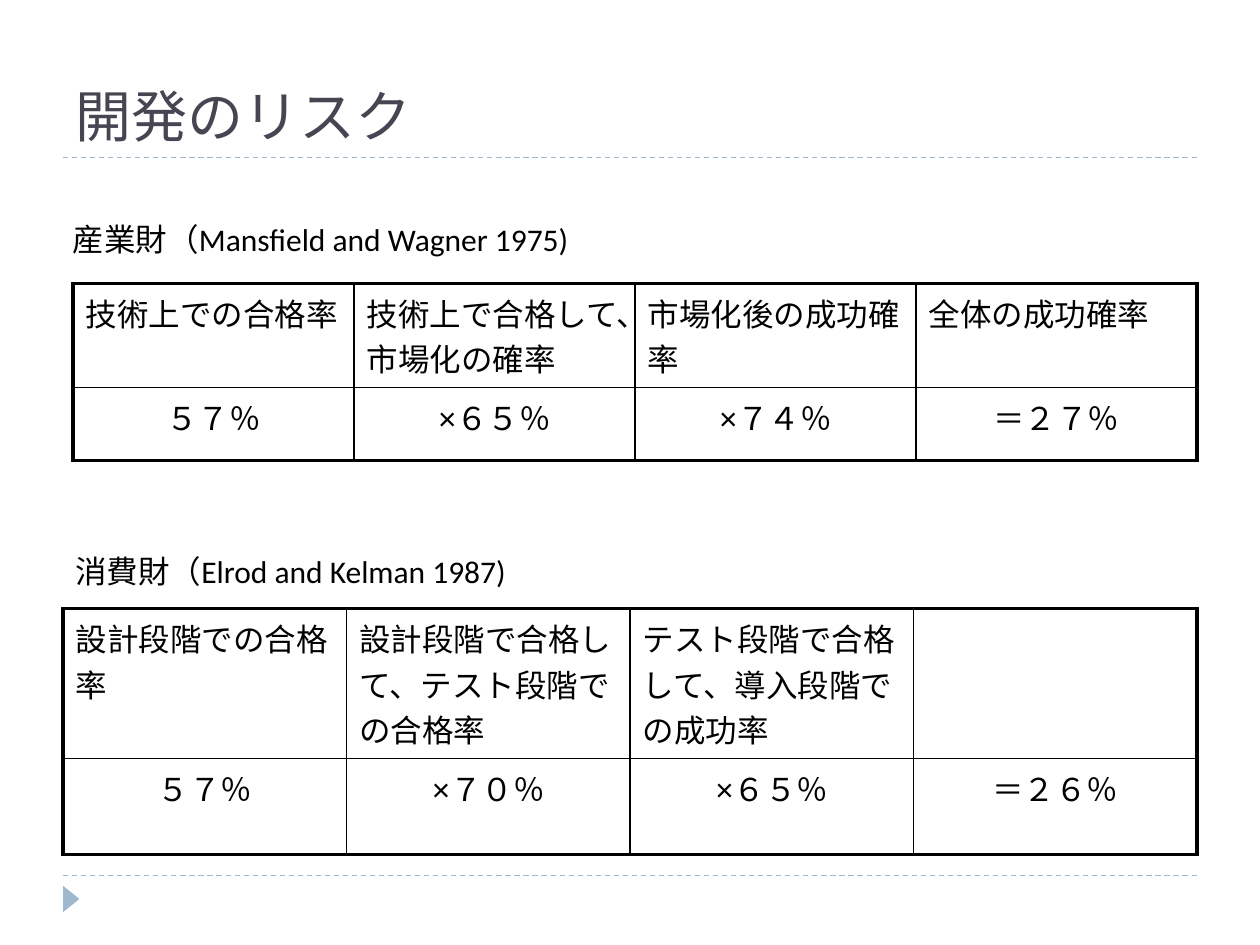
from dataclasses import dataclass

from lxml import etree
from pptx import Presentation
from pptx import util as u
from pptx.dml.color import RGBColor
from pptx.enum import dml, shapes, text
from pptx.oxml import ns


@dataclass(frozen=True)
class Theme:
    ink: str = "000000"
    head: str = "464653"
    rule: str = "9FB8CD"
    big: int = 32
    body: int = 18
    thick: float = 2.25
    thin: float = 1
    hair: float = 0.75
    serif: str = "Roboto Slab"
    sans: str = "Calibri"
    cell: str = "Arial"


COLS, ROWS = 100, 75


def write(frame, words, font, size, color, align=text.PP_ALIGN.LEFT, before=0):
    para = frame.paragraphs[0]
    para.alignment = align
    para.space_before = u.Pt(before)
    run = para.add_run()
    run.text = words
    run.font.name = font
    run.font.size = u.Pt(size)
    run.font.color.rgb = RGBColor.from_string(color)


def edge(cell, side, width, color):
    props = cell._tc.get_or_add_tcPr()
    line = etree.SubElement(props, ns.qn(f"a:ln{side}"), w=str(u.Pt(width)))
    fill = etree.SubElement(line, ns.qn("a:solidFill"))
    etree.SubElement(fill, ns.qn("a:srgbClr"), val=color)


class Deck:
    def __init__(self, theme):
        self.theme = theme
        self.prs = Presentation()
        self.prs.slide_width = u.Inches(10)
        self.prs.slide_height = u.Inches(7.5)
        self.slide = self.prs.slides.add_slide(self.prs.slide_layouts[5])

    def x(self, cols):
        return round(self.prs.slide_width * cols / COLS)

    def y(self, rows):
        return round(self.prs.slide_height * rows / ROWS)

    def box(self, left, top, width, height):
        return self.x(left), self.y(top), self.x(width), self.y(height)

    def title(self, words, *place):
        t = self.theme
        shape = self.slide.shapes.title
        shape.left, shape.top, shape.width, shape.height = self.box(*place)
        frame = shape.text_frame
        frame.auto_size = text.MSO_AUTO_SIZE.NONE
        frame.vertical_anchor = text.MSO_ANCHOR.BOTTOM
        write(frame, words, t.serif, t.big, t.head)

    def rule(self, left, right, row):
        line = self.slide.shapes.add_connector(
            shapes.MSO_CONNECTOR.STRAIGHT,
            self.x(left), self.y(row), self.x(right), self.y(row))
        line.line.color.rgb = RGBColor.from_string(self.theme.rule)
        line.line.width = u.Pt(self.theme.hair)
        line.line.dash_style = dml.MSO_LINE.DASH
        etree.SubElement(line._element.spPr, ns.qn("a:effectLst"))

    def mark(self, *place):
        shape = self.slide.shapes.add_shape(
            shapes.MSO_SHAPE.ISOSCELES_TRIANGLE, *self.box(*place))
        shape.rotation = 90
        shape.shadow.inherit = False
        shape.fill.solid()
        shape.fill.fore_color.rgb = RGBColor.from_string(self.theme.rule)
        shape.line.fill.background()

    def label(self, words, *place):
        t = self.theme
        frame = self.slide.shapes.add_textbox(*self.box(*place)).text_frame
        frame.word_wrap = False
        frame.auto_size = text.MSO_AUTO_SIZE.SHAPE_TO_FIT_TEXT
        write(frame, words, t.sans, t.body, t.ink)

    def table(self, data, left, top, width, highs):
        t = self.theme
        rows, cols = len(data), len(data[0])
        place = self.box(left, top, width, sum(highs))
        grid = self.slide.shapes.add_table(rows, cols, *place).table
        grid.first_row = grid.horz_banding = False
        for row, high in zip(grid.rows, highs):
            row.height = self.y(high)
        for r, line in enumerate(data):
            for c, words in enumerate(line):
                cell = grid.cell(r, c)
                outer = {"L": c == 0, "R": c == cols - 1,
                         "T": r == 0, "B": r == rows - 1}
                for side, out in outer.items():
                    edge(cell, side, t.thick if out else t.thin, t.ink)
                cell.fill.background()
                if words:
                    align = text.PP_ALIGN.CENTER if r else text.PP_ALIGN.LEFT
                    write(cell.text_frame, words, t.cell, t.body, t.ink,
                          align=align, before=t.body * 0.2)


def main():
    deck = Deck(Theme())
    for row in (69.5, 12.5):
        deck.rule(5, 95, row)
    deck.mark(4.6, 70.7, 2.1, 1.3)
    deck.title("開発のリスク", 5, 3, 90, 9.3)
    deck.table([
        ["技術上での合格率", "技術上で合格して、市場化の確率",
         "市場化後の成功確率", "全体の成功確率"],
        ["５７％", "×６５％", "×７４％", "＝２７％"],
    ], 5.8, 22.5, 89.2, (8.2, 5.8))
    deck.table([
        ["設計段階での合格率", "設計段階で合格して、テスト段階での合格率",
         "テスト段階で合格して、導入段階での成功率", ""],
        ["５７％", "×７０％", "×６５％", "＝２６％"],
    ], 5, 48.3, 90, (11.9, 7.6))
    deck.label("産業財（Mansfield and Wagner 1975)", 4.8, 17, 42.8, 4)
    deck.label("消費財（Elrod and Kelman 1987)", 5, 43.3, 37.7, 4)
    deck.prs.save("out.pptx")


if __name__ == "__main__":
    main()
